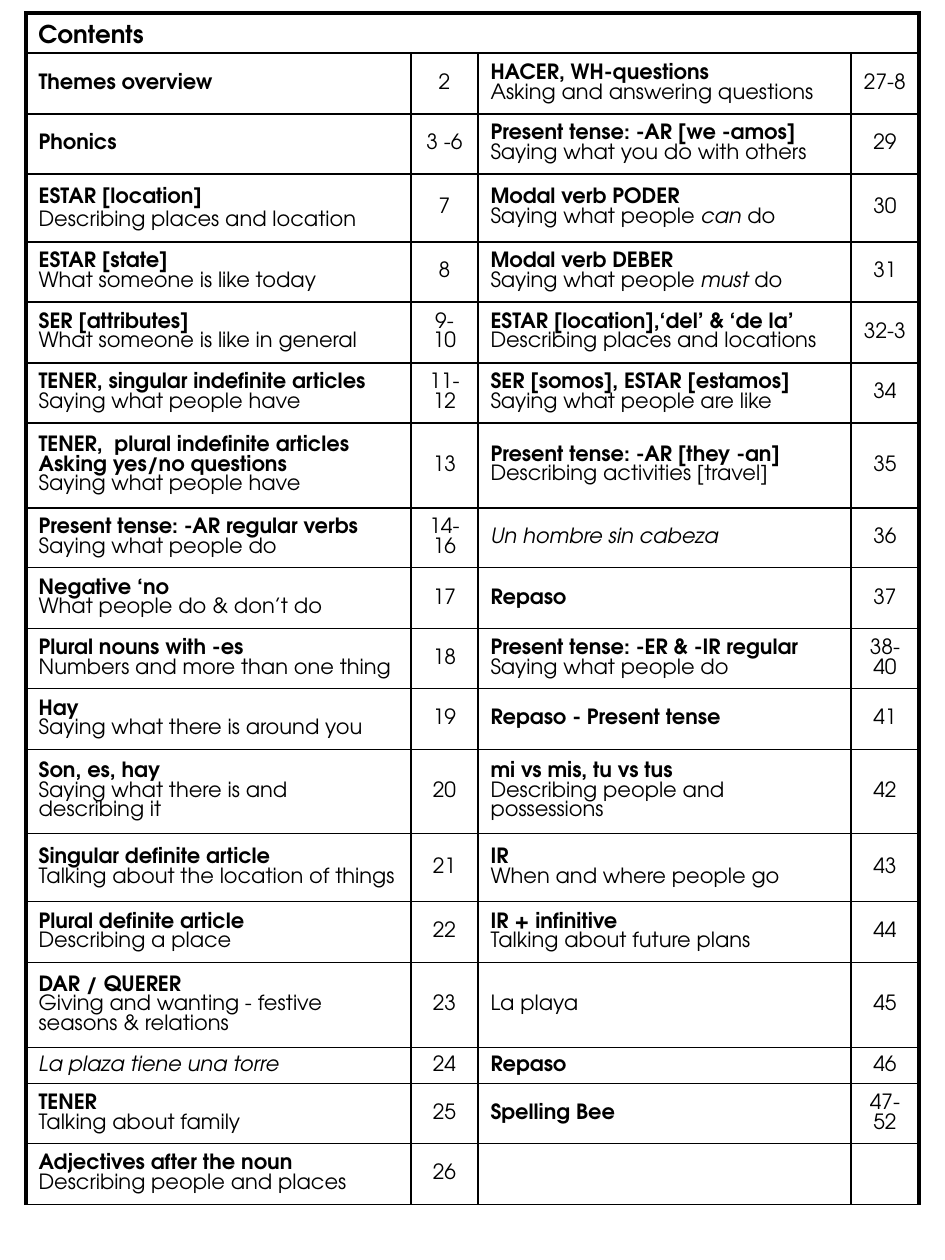
from dataclasses import dataclass

import lxml.etree
import pptx
import pptx.dml.color
import pptx.enum.text
import pptx.oxml.ns
import pptx.util

PX = 914400 // 126


@dataclass(frozen=True)
class Theme:
    """Colours, font and type sizes of the slide."""
    font: str = "TeX Gyre Adventor"
    ink: str = "000000"
    title: float = 14
    body: float = 12
    thin: float = 1
    thick: float = 2.25


THEME = Theme()
COLUMNS = (385, 67, 373, 68)
ROWS = (40, 61, 60, 68, 60, 61, 60, 85, 60, 61, 60, 61, 84, 68, 61, 85, 36, 60, 61)

LEFT_ENTRIES = (
    ("Themes overview", "", "2"),
    ("Phonics", "", "3 -6"),
    ("ESTAR [location]", "Describing places and location", "7"),
    ("ESTAR [state]", "What someone is like today", "8"),
    ("SER [attributes]", "What someone is like in general", "9-10"),
    ("TENER, singular indefinite articles", "Saying what people have", "11-12"),
    ("TENER,  plural indefinite articles\nAsking yes/no questions",
     "Saying what people have", "13"),
    ("Present tense: -AR regular verbs", "Saying what people do", "14-16"),
    ("Negative ‘no", "What people do & don’t do", "17"),
    ("Plural nouns with -es", "Numbers and more than one thing", "18"),
    ("Hay", "Saying what there is around you", "19"),
    ("Son, es, hay", "Saying what there is and describing it", "20"),
    ("Singular definite article", "Talking about the location of things", "21"),
    ("Plural definite article", "Describing a place", "22"),
    ("DAR / QUERER", "Giving and wanting - festive seasons & relations", "23"),
    ("", "_La plaza tiene una torre_", "24"),
    ("TENER", "Talking about family", "25"),
    ("Adjectives after the noun", "Describing people and places", "26"),
)
RIGHT_ENTRIES = (
    ("HACER, WH-questions", "Asking and answering questions", "27-8"),
    ("Present tense: -AR [we -amos]", "Saying what you do with others", "29"),
    ("Modal verb PODER", "Saying what people _can_ do", "30"),
    ("Modal verb DEBER", "Saying what people _must _do", "31"),
    ("ESTAR [location],‘del’ & ‘de la’", "Describing places and locations", "32-3"),
    ("SER [somos], ESTAR [estamos]", "Saying what people are like", "34"),
    ("Present tense: -AR [they -an]", "Describing activities [travel]", "35"),
    ("", "_Un hombre sin cabeza_", "36"),
    ("Repaso", "", "37"),
    ("Present tense: -ER & -IR regular", "Saying what people do", "38-40"),
    ("Repaso - Present tense", "", "41"),
    ("mi vs mis, tu vs tus", "Describing people and possessions", "42"),
    ("IR", "When and where people go", "43"),
    ("IR + infinitive", "Talking about future plans", "44"),
    ("", "La playa", "45"),
    ("Repaso", "", "46"),
    ("Spelling Bee", "", "47-52"),
    ("", "", ""),
)


def px(n):
    """Turn whole pixels into EMU."""
    return pptx.util.Emu(n * PX)


def style_paragraph(p, size, bold=None):
    """Set the font that all runs of a paragraph share."""
    p.font.name = THEME.font
    p.font.size = pptx.util.Pt(size)
    p.font.bold = bold
    p.font.color.rgb = pptx.dml.color.RGBColor.from_string(THEME.ink)


def add_run(p, text, bold=False, italic=False):
    """Add a run to a paragraph."""
    r = p.add_run()
    r.text = text
    r.font.bold = bold
    r.font.italic = italic


def add_border(cell, side, width):
    """Draw one side of a cell."""
    qn = pptx.oxml.ns.qn
    tc_pr = cell._tc.get_or_add_tcPr()
    ln = lxml.etree.SubElement(tc_pr, qn(f"a:ln{side}"), w=str(pptx.util.Pt(width)))
    fill = lxml.etree.SubElement(ln, qn("a:solidFill"))
    lxml.etree.SubElement(fill, qn("a:srgbClr"), val=THEME.ink)


def style_cell(cell, thick_sides):
    """Give a cell its borders, clear fill and middle anchor."""
    for side in "LRTB":
        add_border(cell, side, THEME.thick if side in thick_sides else THEME.thin)
    cell.fill.background()
    cell.vertical_anchor = pptx.enum.text.MSO_ANCHOR.MIDDLE
    style_paragraph(cell.text_frame.paragraphs[0], THEME.body)


def fill_topic(cell, heading, detail):
    """Write a bold heading and its detail, with _italic_ parts."""
    p = cell.text_frame.paragraphs[0]
    for i, line in enumerate(heading.splitlines()):
        if i:
            p.add_line_break()
        add_run(p, line, bold=True)
    if heading and detail:
        p.add_line_break()
    for i, part in enumerate(detail.split("_")):
        if part:
            add_run(p, part, italic=i % 2 == 1)


def fill_page(cell, page):
    """Write a centred page number."""
    p = cell.text_frame.paragraphs[0]
    p.alignment = pptx.enum.text.PP_ALIGN.CENTER
    if page:
        add_run(p, page)


def add_contents_table(s, left, top):
    """Add the two-column contents table under a merged header row."""
    frame = s.shapes.add_table(len(ROWS), len(COLUMNS), px(left), px(top),
                               px(sum(COLUMNS)), px(sum(ROWS)))
    table = frame.table
    table.first_row = table.horz_banding = False
    for column, width in zip(table.columns, COLUMNS):
        column.width = px(width)
    for row, height in zip(table.rows, ROWS):
        row.height = px(height)
    last = len(COLUMNS) - 1
    for i, row in enumerate(table.rows):
        for j, cell in enumerate(row.cells):
            if i == 0:
                style_cell(cell, "LRT")
                cell.margin_top = cell.margin_bottom = 0
            else:
                style_cell(cell, {0: "L", last: "R"}.get(j, ""))
    table.cell(0, 0).merge(table.cell(0, last))
    for first, entries in ((0, LEFT_ENTRIES), (2, RIGHT_ENTRIES)):
        for i, (heading, detail, page) in enumerate(entries, start=1):
            fill_topic(table.cell(i, first), heading, detail)
            fill_page(table.cell(i, first + 1), page)
    table.cell(3, 0).text_frame.paragraphs[0].line_spacing = 1.15


def add_title(s, text, left, top, width, height):
    """Add the bold title over the header row."""
    tf = s.shapes.add_textbox(px(left), px(top), px(width), px(height)).text_frame
    tf.word_wrap = True
    tf.vertical_anchor = pptx.enum.text.MSO_ANCHOR.MIDDLE
    p = tf.paragraphs[0]
    p.text = text
    style_paragraph(p, THEME.title, bold=True)


def main():
    """Build and save the contents slide."""
    prs = pptx.Presentation()
    prs.slide_width = pptx.util.Inches(7.5)
    prs.slide_height = pptx.util.Inches(10)
    s = prs.slides.add_slide(prs.slide_layouts[6])
    add_contents_table(s, 26, 13)
    add_title(s, "Contents", 26, 13, 149, 42)
    prs.save("out.pptx")


if __name__ == "__main__":
    main()
